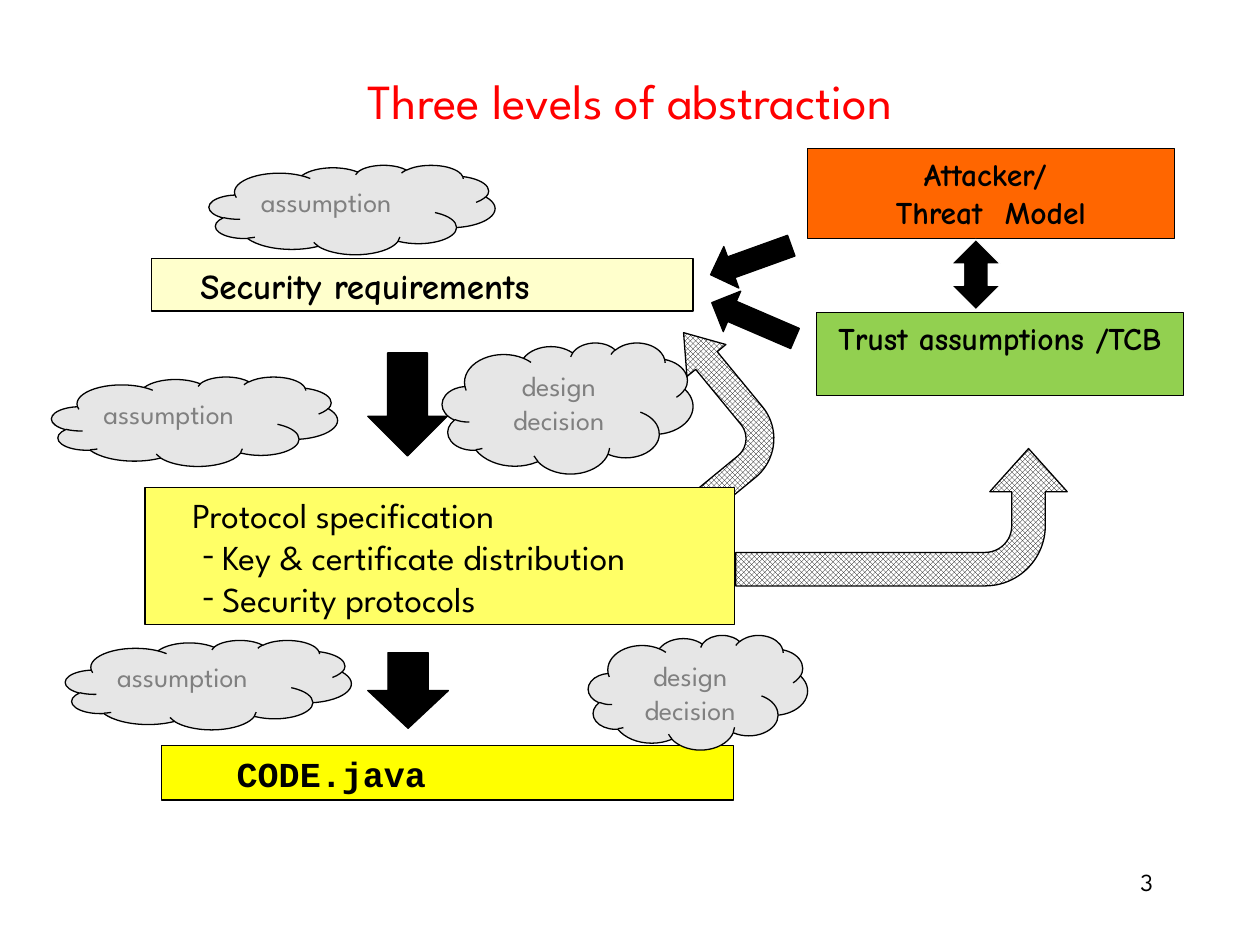
from dataclasses import dataclass
from typing import Optional

from lxml.etree import SubElement
from pptx import Presentation
from pptx.dml.color import RGBColor
from pptx.enum.dml import MSO_PATTERN
from pptx.enum.shapes import MSO_SHAPE as Geo
from pptx.enum.text import MSO_ANCHOR as Anchor, PP_ALIGN as Align
from pptx.oxml.ns import qn
from pptx.util import Pt

BODY, HAND, MONO = "League Spartan", "Comic Neue", "Courier New"
BLACK, WHITE, GREY = "000000", "FFFFFF", "808080"


@dataclass
class Line:
    """One paragraph; a dash hangs in front of its text."""
    text: str
    indent: float = 0
    dash: bool = False


@dataclass
class Style:
    font: str
    size: float
    color: str = BLACK
    bold: bool = False
    align: Align = Align.LEFT


@dataclass
class Box:
    place: tuple[float, float, float, float]
    fill: str
    style: Style
    lines: list[Line]
    geometry: Geo = Geo.RECTANGLE


@dataclass
class Arrow:
    geometry: Geo
    place: tuple[float, float, float, float]
    rotation: float = 0
    outline: str = BLACK
    bend: Optional[tuple[float, ...]] = None


def rgb(code: str) -> RGBColor:
    return RGBColor.from_string(code)


def write(frame, lines: list[Line], style: Style, anchor=Anchor.TOP) -> None:
    frame_format = {
        "word_wrap": True, "vertical_anchor": anchor,
        "margin_left": Pt(7.2), "margin_right": Pt(7.2),
        "margin_top": Pt(3.6), "margin_bottom": Pt(3.6),
    }
    for name, value in frame_format.items():
        setattr(frame, name, value)
    font_format = {"name": style.font, "size": Pt(style.size), "bold": style.bold}
    for number, line in enumerate(lines):
        paragraph = frame.add_paragraph() if number else frame.paragraphs[0]
        properties = paragraph._p.get_or_add_pPr()
        properties.set("marL", str(Pt(line.indent)))
        properties.set("indent", str(Pt(-11.5) if line.dash else 0))
        if line.dash:
            SubElement(properties, qn("a:buFont"), typeface=style.font)
            SubElement(properties, qn("a:buChar"), char="-")
        paragraph.alignment = style.align
        run = paragraph.add_run()
        run.text = line.text
        for name, value in font_format.items():
            setattr(run.font, name, value)
        run.font.color.rgb = rgb(style.color)


def draw_shape(slide, geometry: Geo, place, outline: str = BLACK):
    shape = slide.shapes.add_shape(geometry, *map(Pt, place))
    shape.shadow.inherit = False
    shape.line.color.rgb = rgb(outline)
    shape.line.width = Pt(0.75)
    return shape


def draw_box(slide, box: Box) -> None:
    shape = draw_shape(slide, box.geometry, box.place)
    shape.fill.solid()
    shape.fill.fore_color.rgb = rgb(box.fill)
    write(shape.text_frame, box.lines, box.style)


def draw_arrow(slide, arrow: Arrow) -> None:
    shape = draw_shape(slide, arrow.geometry, arrow.place, arrow.outline)
    shape.rotation = arrow.rotation
    if arrow.bend is None:
        shape.fill.solid()
        shape.fill.fore_color.rgb = rgb(BLACK)
        return
    shape.fill.patterned()
    shape.fill.pattern = MSO_PATTERN.TRELLIS
    shape.fill.fore_color.rgb = rgb(BLACK)
    shape.fill.back_color.rgb = rgb(WHITE)
    for number, value in enumerate(arrow.bend):
        shape.adjustments[number] = value
    shape._element.spPr.get_or_add_xfrm().set("flipV", "1")


def draw_label(slide, place, text: str, style: Style, anchor=Anchor.TOP) -> None:
    label = slide.shapes.add_textbox(*map(Pt, place))
    write(label.text_frame, [Line(text)], style, anchor)


def cloud(place, text: str, align: Align) -> Box:
    return Box(place, "E6E6E6", Style(BODY, 16, GREY, align=align), [Line(text)], Geo.CLOUD)


MODEL = Style(HAND, 18, bold=True, align=Align.CENTER)

LEVELS = [
    Box((86.4, 147.6, 309.6, 30.2), "FFFFCC", Style(HAND, 20, bold=True),
        [Line("Security requirements", 21)]),
    Box((461.5, 85, 209.5, 51.1), "FF6600", MODEL,
        [Line("Attacker/ "), Line("Threat  Model")]),
    Box((92.2, 426.2, 326.9, 31), "FFFF00", Style(MONO, 20, bold=True),
        [Line("CODE.java", 36)]),
]
TRUST = Box((466.6, 178.6, 209.5, 47.5), "92D050", MODEL, [Line("Trust assumptions /TCB")])
PROTOCOL = Box((82.8, 278.6, 337, 78.5), "FFFF66", Style(BODY, 20), [
    Line("Protocol specification", 20),
    Line("Key & certificate distribution", 37, dash=True),
    Line("Security protocols", 37, dash=True),
])

REFINEMENTS = [
    Arrow(Geo.DOWN_ARROW, (210.2, 201.6, 45.4, 59)),
    Arrow(Geo.DOWN_ARROW, (210.2, 373, 46.1, 43.2)),
]
INFLUENCES = [
    Arrow(Geo.LEFT_ARROW, (404.6, 136.1, 49, 25.2), 340.2),
    Arrow(Geo.LEFT_ARROW, (404.6, 170.6, 51.8, 25.2), 23.3),
    Arrow(Geo.UP_DOWN_ARROW, (543.6, 136.8, 28.1, 40.3), outline=WHITE),
]
FEEDBACK = [
    Arrow(Geo.BENT_ARROW, (475.9, 200.9, 78.5, 189.4), 270, bend=(0.244, 0.282, 0.314, 0.438)),
    Arrow(Geo.BENT_ARROW, (360, 203.8, 90, 65.5), 230.6, bend=(0.243, 0.22, 0.314, 0.438)),
]

ASSUMPTIONS = [cloud((left, top, 163.4, 51.1), "assumption", Align.LEFT)
               for left, top in ((119.5, 94.3), (29.5, 215.3), (37.4, 365.8))]
DECISIONS = [cloud(place, "design decision", Align.CENTER)
             for place in ((252.7, 195.8, 143.3, 74.9), (336.2, 362.9, 125.3, 65.5))]


def main() -> None:
    deck = Presentation()
    deck.slide_width, deck.slide_height = Pt(720), Pt(540)
    slide = deck.slides.add_slide(deck.slide_layouts[6])

    # Title and page number
    draw_label(slide, (54, 25.9, 612, 62.6), "Three levels of abstraction",
               Style(BODY, 28, "FF0000", align=Align.CENTER), Anchor.MIDDLE)
    draw_label(slide, (516.2, 491.8, 149.8, 36), "3", Style(BODY, 14, align=Align.RIGHT))

    # Levels, refinement steps and the choices around them
    for box in LEVELS:
        draw_box(slide, box)
    for arrow in REFINEMENTS:
        draw_arrow(slide, arrow)
    for box in ASSUMPTIONS + DECISIONS + [TRUST]:
        draw_box(slide, box)

    # Influences and feedback, whose tails run under the protocol box
    for arrow in INFLUENCES + FEEDBACK:
        draw_arrow(slide, arrow)
    draw_box(slide, PROTOCOL)

    deck.save("out.pptx")


if __name__ == "__main__":
    main()
